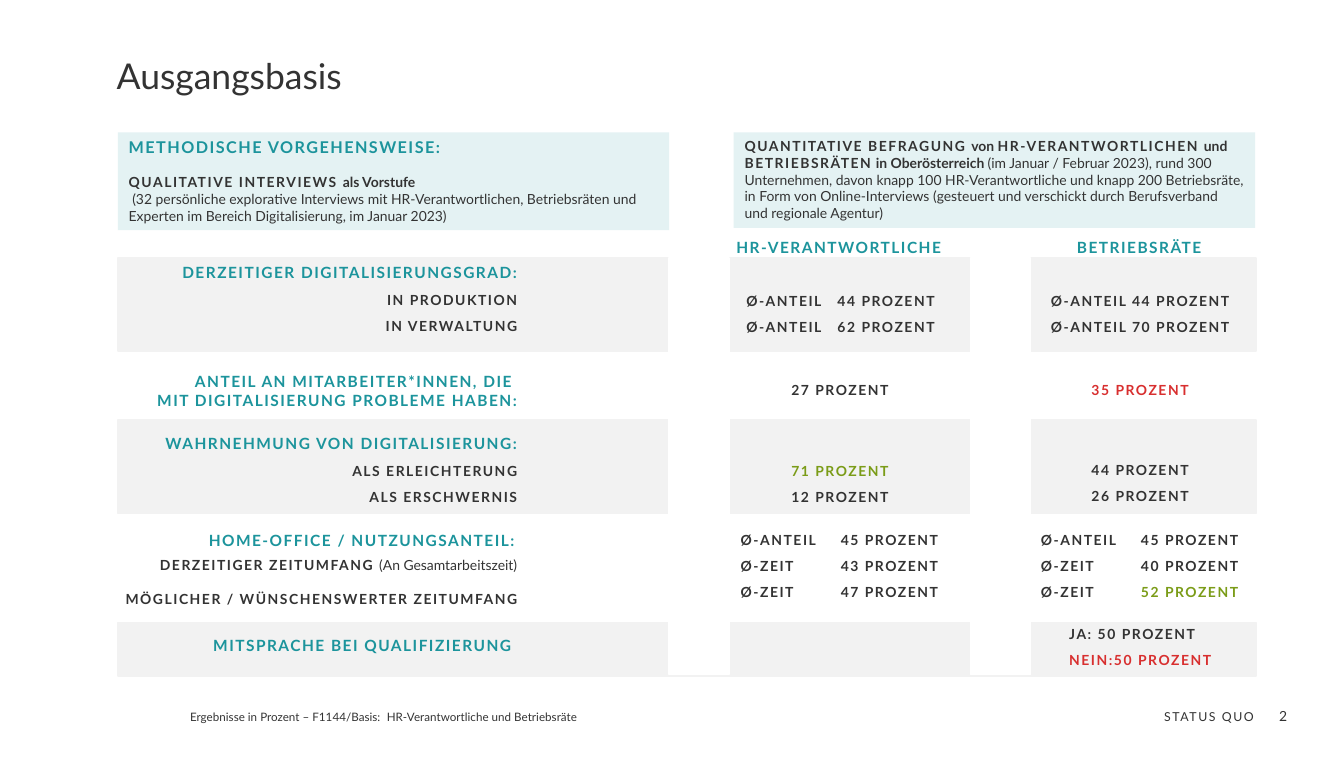
from lxml import etree
from pptx import Presentation
from pptx import util as u
from pptx.dml.color import RGBColor
from pptx.enum import shapes, text
from pptx.oxml.ns import qn

DARK = RGBColor(0x33, 0x33, 0x33)
TEAL = RGBColor(0x1C, 0x94, 0x9C)
RED = RGBColor(0xD8, 0x2F, 0x2F)
GREEN = RGBColor(0x7B, 0x9C, 0x18)
PALE = RGBColor(0xE4, 0xF2, 0xF3)
GREY = RGBColor(0xF2, 0xF2, 0xF2)
WHITE = RGBColor(0xFF, 0xFF, 0xFF)
LEFT, RIGHT = text.PP_ALIGN.LEFT, text.PP_ALIGN.RIGHT

# Run styles: size, colour, bold, letter spacing in points
INTRO = (10.5, TEAL, True, 1)
HEAD = (10, TEAL, True, 1)
CAPS = (9, DARK, True, 1)
GOOD = (9, GREEN, True, 1)
BAD = (9, RED, True, 1)
BOLD = (9, DARK, True, 0)
BODY = (9, DARK, False, 0)
TITLE = (23, DARK, False, 0)
NOTE = (7.5, DARK, False, 0)
SECTION = (8, DARK, False, 1)

# Content: a text is a list of lines, a line is a list of (text, style) runs
SLIDE_WIDTH, SLIDE_HEIGHT = 12.09, 6.81
PANELS = [  # left, width, height, lines, space before each line
    (1.06, 4.96, 0.88, [
        [("METHODISCHE VORGEHENSWEISE:", INTRO)],
        [("QUALITATIVE INTERVIEWS ", CAPS), ("als Vorstufe", BOLD)],
        [(" (32 persönliche explorative Interviews mit HR-Verantwortlichen, Betriebsräten "
          "und Experten im Bereich Digitalisierung, im Januar 2023)", BODY)]], (0, 10.8, 0)),
    (6.6, 4.69, 0.86, [
        [("QUANTITATIVE BEFRAGUNG ", CAPS), ("von ", BOLD), ("HR-VERANTWORTLICHEN ", CAPS),
         ("und ", BOLD), ("BETRIEBSRÄTEN", CAPS), (" in Oberösterreich ", BOLD),
         ("(im Januar / Februar 2023), rund 300 Unternehmen, davon knapp 100 "
          "HR-Verantwortliche und knapp 200 Betriebsräte, in Form von Online-Interviews "
          "(gesteuert und verschickt durch Berufsverband und regionale Agentur)", BODY)]],
     (0,)),
]
LABELS = [  # top, width, alignment, gap between lines, lines
    (2.32, 3.28, RIGHT, 6, [[("DERZEITIGER DIGITALISIERUNGSGRAD:", HEAD)],
                            [("IN PRODUKTION", CAPS)], [("IN VERWALTUNG", CAPS)]]),
    (3.3, 3.49, RIGHT, 0, [[("ANTEIL AN MITARBEITER*INNEN, DIE ", HEAD)],
                           [("MIT DIGITALISIERUNG PROBLEME HABEN:", HEAD)]]),
    (3.86, 3.42, RIGHT, 6, [[("WAHRNEHMUNG VON DIGITALISIERUNG:", HEAD)],
                            [("ALS ERLEICHTERUNG", CAPS)], [("ALS ERSCHWERNIS", CAPS)]]),
    (4.73, 2.97, LEFT, 0, [[("HOME-OFFICE / NUTZUNGSANTEIL:", HEAD)]]),
    (4.96, 3.75, RIGHT, 10.8, [
        [("DERZEITIGER ZEITUMFANG ", CAPS), ("(An Gesamtarbeitszeit)", BODY)],
        [("MÖGLICHER / WÜNSCHENSWERTER ZEITUMFANG", CAPS)]]),
    (5.67, 2.93, LEFT, 0, [[("MITSPRACHE BEI QUALIFIZIERUNG", HEAD)]]),
]
HR, COUNCIL = 0, 1
VALUES = [  # column, top, width, tab stop, lines
    (HR, 2.09, 2.09, None, [[("HR-VERANTWORTLICHE", HEAD)]]),
    (HR, 2.58, 1.91, 0.82, [[("Ø-ANTEIL\t44 PROZENT", CAPS)],
                            [("Ø-ANTEIL\t62 PROZENT", CAPS)]]),
    (HR, 3.38, 1.1, None, [[("27 PROZENT", CAPS)]]),
    (HR, 4.11, 1.1, None, [[("71 PROZENT", GOOD)], [("12 PROZENT", CAPS)]]),
    (HR, 4.73, 2.01, 0.9, [[("Ø-ANTEIL \t45 PROZENT", CAPS)],
                           [("Ø-ZEIT \t43 PROZENT", CAPS)],
                           [("Ø-ZEIT \t47 PROZENT", CAPS)]]),
    (COUNCIL, 2.09, 1.36, None, [[("BETRIEBSRÄTE", HEAD)]]),
    (COUNCIL, 2.58, 1.83, None, [[("Ø-ANTEIL 44 PROZENT", CAPS)],
                                 [("Ø-ANTEIL 70 PROZENT", CAPS)]]),
    (COUNCIL, 3.38, 1.1, None, [[("35 PROZENT", BAD)]]),
    (COUNCIL, 4.1, 1.1, None, [[("44 PROZENT", CAPS)], [("26 PROZENT", CAPS)]]),
    (COUNCIL, 4.73, 2.01, 0.9, [[("Ø-ANTEIL \t45 PROZENT", CAPS)],
                                [("Ø-ZEIT \t40 PROZENT", CAPS)],
                                [("Ø-ZEIT \t", CAPS), ("52 PROZENT", GOOD)]]),
    (COUNCIL, 5.58, 1.5, None, [[("JA: 50 PROZENT", CAPS)], [("NEIN:50 PROZENT", BAD)]]),
]
FRAMES = [  # box, insets, wrap, alignment, line spacing, run
    ((1.05, 0.52, 8.43, 0.4), (0, 0, 0.1, 0.05), True, LEFT, u.Pt(25.3),
     ("Ausgangsbasis", TITLE)),
    ((1.71, 6.39, 1.74, 0.13), (0, 0, 0, 0), False, LEFT, None,
     ("Ergebnisse in Prozent – F1144/Basis:", NOTE)),
    ((3.48, 6.39, 1.77, 0.13), (0, 0, 0, 0), False, LEFT, None,
     ("HR-Verantwortliche und Betriebsräte", NOTE)),
    ((8.92, 6.35, 2.46, 0.23), (0.1, 0.05, 0.1, 0.05), True, RIGHT, 0.9,
     ("STATUS QUO", SECTION)),
    ((11.23, 6.32, 0.35, 0.2), (0.1, 0.05, 0, 0), False, RIGHT, None, ("2", BODY)),
]

# Grid
GRID_LEFT, GRID_WIDTH, PANEL_TOP = 1.06, 10.24, 1.19
BANDS = [(2.32, 0.84), (3.78, 0.84), (5.6, 0.48)]
GAPS, GAP_WIDTH, GAP_HEIGHT = [6.02, 8.73], 0.54, 3.75
LABEL_RIGHT, VALUE_CENTRE, VALUE_STEP = 4.75, 7.57, 2.7
INSETS, LINE_GAP = (0.1, 0.05, 0.1, 0.05), 6


def assign(target, values):
    for name, value in values.items():
        setattr(target, name, value)


def add_block(slide, box, color, line=None):
    shape = slide.shapes.add_shape(shapes.MSO_SHAPE.RECTANGLE, *map(u.Inches, box))
    shape.shadow.inherit = False
    shape.fill.solid()
    shape.fill.fore_color.rgb = color
    if line:
        shape.line.color.rgb = color
        shape.line.width = u.Pt(line)
    else:
        shape.line.fill.background()
    return shape


def write(shape, lines, before, align=LEFT, wrap=False, insets=INSETS, spacing=None, tab=None):
    frame = shape.text_frame
    margins = zip(("margin_left", "margin_top", "margin_right", "margin_bottom"),
                  map(u.Inches, insets))
    assign(frame, {**dict(margins), "word_wrap": wrap,
                   "vertical_anchor": text.MSO_ANCHOR.TOP})
    for index, runs in enumerate(lines):
        paragraph = frame.add_paragraph() if index else frame.paragraphs[0]
        assign(paragraph, {"alignment": align, "line_spacing": spacing})
        if before[index]:
            paragraph.space_before = u.Pt(before[index])
        if tab:
            stops = etree.SubElement(paragraph._p.get_or_add_pPr(), qn("a:tabLst"))
            etree.SubElement(stops, qn("a:tab"), pos=str(u.Inches(tab)), algn="l")
        for words, (size, color, bold, tracking) in runs:
            run = paragraph.add_run()
            run.text = words
            assign(run.font, {"size": u.Pt(size), "name": "Lato", "bold": bold})
            run.font.color.rgb = color
            run._r.get_or_add_rPr().set("spc", str(tracking * 100))


def add_lines(slide, left, top, width, lines, gap, **options):
    """Text box as tall as its lines at 1.2 times the type size."""
    before = [0] + [gap] * (len(lines) - 1)
    points = sum(before) + sum(1.2 * runs[0][1][0] for runs in lines)
    box = (left, top, width, points / 72 + 0.1)
    write(slide.shapes.add_textbox(*map(u.Inches, box)), lines, before, **options)


def main():
    presentation = Presentation()
    assign(presentation, {"slide_width": u.Inches(SLIDE_WIDTH),
                          "slide_height": u.Inches(SLIDE_HEIGHT)})
    slide = presentation.slides.add_slide(presentation.slide_layouts[6])

    # Grey bands, split into three columns by white gaps
    for top, height in BANDS:
        add_block(slide, (GRID_LEFT, top, GRID_WIDTH, height), GREY, 1)
    for left in GAPS:
        add_block(slide, (left, BANDS[0][0], GAP_WIDTH, GAP_HEIGHT), WHITE, 1)

    # Title and footer
    for box, insets, wrap, align, spacing, run in FRAMES:
        write(slide.shapes.add_textbox(*map(u.Inches, box)), [[run]], [0],
              align, wrap, insets, spacing)

    # Method panels
    for left, width, height, lines, before in PANELS:
        panel = add_block(slide, (left, PANEL_TOP, width, height), PALE)
        write(panel, lines, before, wrap=True)

    # Row labels end on one edge, values are centred on their column
    for top, width, align, gap, lines in LABELS:
        add_lines(slide, LABEL_RIGHT - width, top, width, lines, gap, align=align)
    for column, top, width, tab, lines in VALUES:
        left = VALUE_CENTRE + column * VALUE_STEP - width / 2
        add_lines(slide, left, top, width, lines, LINE_GAP, tab=tab)

    presentation.save("out.pptx")


if __name__ == "__main__":
    main()
